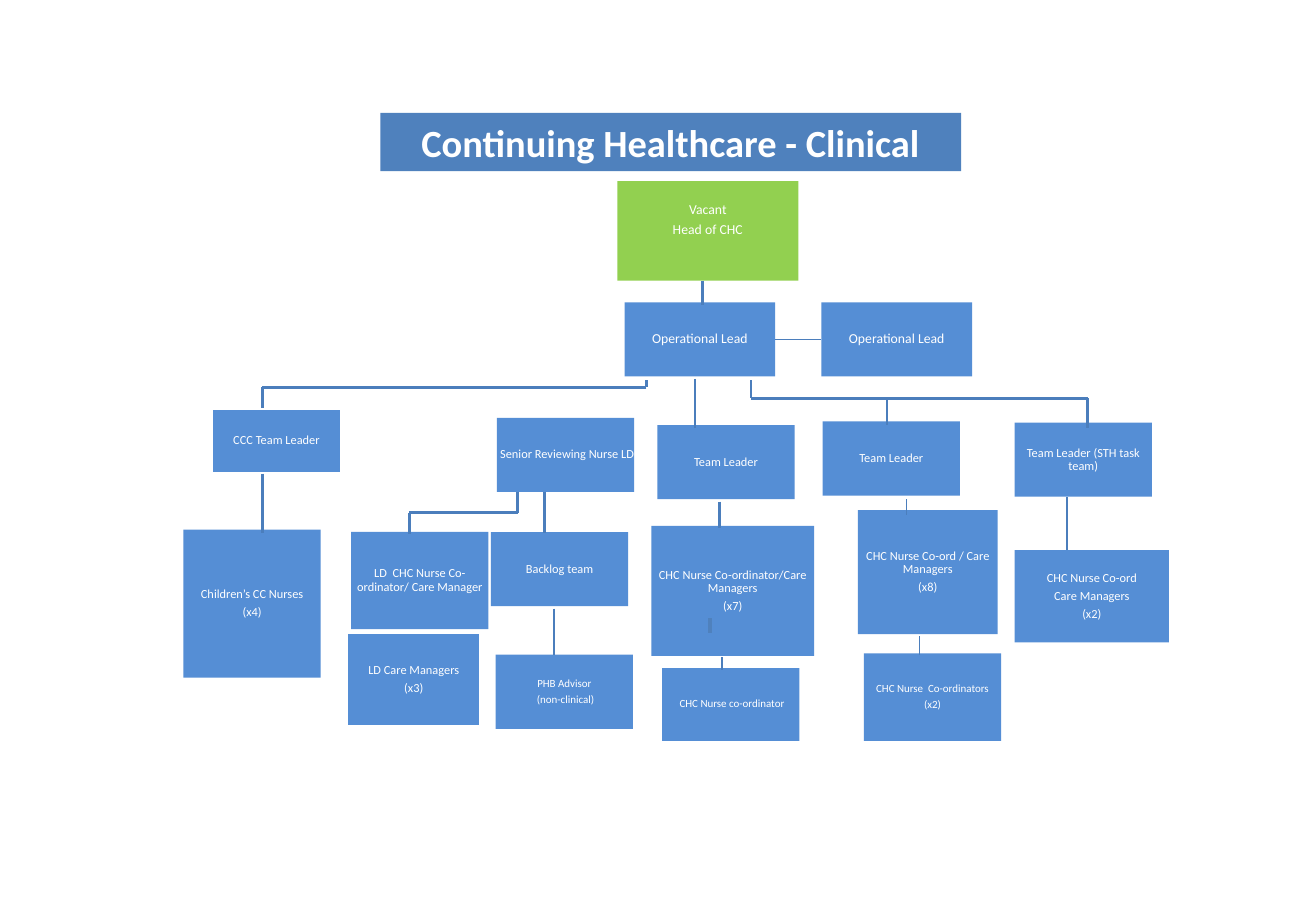
from lxml import etree
from pptx import Presentation
from pptx.dml.color import RGBColor
from pptx.enum.shapes import MSO_CONNECTOR as Connector, MSO_SHAPE as Shape
from pptx.enum.text import MSO_ANCHOR as Anchor, PP_ALIGN as Align
from pptx.oxml.ns import qn
from pptx.util import Inches, Pt

COLORS = {"title": "4F81BD", "vacant": "92D050", "team": "558ED5",
          "line": "4B7EBC", "mark": "4F81BD", "white": "FFFFFF"}
FONT = "Calibri"
TITLE = ("Continuing Healthcare - Clinical", 3.13, 0.93, 4.78, 0.48)
HEAD = ("Vacant\nHead of CHC", 5.08, 1.49, 1.49, 0.82)
HEAD_INSET = 0.18

LEAD_SIZE = (1.24, 0.61)
LEADS = [("Operational Lead", 5.14, 2.49), ("Operational Lead", 6.76, 2.49)]

TEAM_SIZE = (1.13, 0.61)
TEAMS = [
    (" Senior Reviewing Nurse LD", 4.09, 3.44),
    ("Backlog team", 4.04, 4.38),
    ("Team Leader", 5.41, 3.5),
    ("Team Leader", 6.77, 3.47),
    ("Team Leader (STH task team)", 8.35, 3.48),
]
STAFF = [
    ("LD  CHC Nurse Co-ordinator/ Care Manager", 2.89, 4.38, 1.13, 0.8),
    ("Children’s CC Nurses\n(x4)", 1.51, 4.36, 1.13, 1.22),
    ("CHC Nurse Co-ordinator/Care Managers\n(x7)", 5.36, 4.33, 1.34, 1.07),
    ("CHC Nurse Co-ord / Care Managers\n(x8)", 7.06, 4.2, 1.15, 1.02),
    ("CHC Nurse Co-ord\nCare Managers\n(x2)", 8.35, 4.53, 1.27, 0.76),
]
SMALL_PRINT = [
    ("PHB Advisor\n (non-clinical)", 4.08, 5.39, 1.13, 0.61),
    (" CHC Nurse co-ordinator", 5.45, 5.5, 1.13, 0.6),
    ("CHC Nurse  Co-ordinators\n(x2)", 7.11, 5.38, 1.13, 0.72),
]
OUTLINED = [
    ("CCC Team Leader", 1.74, 3.36, 1.07, 0.54),
    ("LD Care Managers\n(x3)", 2.85, 5.21, 1.11, 0.77),
]

ROUTES = [
    [(4.48, 4.05), (4.48, 4.39)],
    [(8.78, 4.09), (8.78, 4.53)],
    [(2.16, 3.9), (2.16, 4.39)],
    [(5.78, 2.31), (5.78, 2.51)],
    [(5.32, 3.13), (5.32, 3.19), (2.16, 3.19), (2.16, 3.36)],
    [(5.72, 3.12), (5.72, 3.52)],
    [(6.18, 3.13), (6.18, 3.28), (8.95, 3.28), (8.95, 3.52)],
    [(7.3, 3.28), (7.3, 3.5)],
    [(5.92, 4.13), (5.92, 4.35)],
    [(5.94, 5.41), (5.94, 5.52)],
    [(4.26, 4.05), (4.26, 4.22), (3.37, 4.22), (3.37, 4.4)],
]
THIN_ROUTES = [
    [(4.56, 5.01), (4.56, 5.39)],
    [(7.46, 4.11), (7.46, 4.24)],
    [(7.57, 5.24), (7.57, 5.39)],
]
MARK = [(5.84, 5.09), (5.84, 5.21)]


def color(name):
    return RGBColor.from_string(COLORS[name])


def add_box(page, text, left, top, width, height, size, fill="team", outlined=False):
    box = page.shapes.add_shape(Shape.RECTANGLE, *map(Inches, (left, top, width, height)))
    box.shadow.inherit = False
    box.fill.solid()
    box.fill.fore_color.rgb = color(fill)
    if outlined:
        box.line.color.rgb = color("white")
        box.line.width = Pt(2)
    else:
        box.line.fill.background()
    frame = box.text_frame
    frame.text = text
    frame.word_wrap = True
    frame.vertical_anchor = Anchor.MIDDLE
    frame.margin_left = frame.margin_right = frame.margin_top = frame.margin_bottom = 0
    for para in frame.paragraphs:
        para.alignment = Align.CENTER
        para.line_spacing = 0.9
        para.space_after = Pt(round(size * 0.35, 1))
        for span in para.runs:
            span.font.name = FONT
            span.font.size = Pt(size)
            span.font.color.rgb = color("white")
    return box


def add_line(page, start, end, width, name="line"):
    line = page.shapes.add_connector(Connector.STRAIGHT, *map(Inches, start + end))
    line.line.color.rgb = color(name)
    line.line.width = Pt(width)
    etree.SubElement(line._element.spPr, qn("a:effectLst"))
    return line


def main():
    deck = Presentation()
    deck.slide_width, deck.slide_height = Inches(10.83), Inches(7.5)
    page = deck.slides.add_slide(deck.slide_layouts[6])

    head = add_box(page, *HEAD, 8.1, "vacant")
    head.text_frame.vertical_anchor = Anchor.TOP
    head.text_frame.margin_top = Inches(HEAD_INSET)
    first_lead, second_lead = [add_box(page, *lead, *LEAD_SIZE, 8.1) for lead in LEADS]
    for team in TEAMS:
        add_box(page, *team, *TEAM_SIZE, 7.3)
    for staff in STAFF:
        add_box(page, *staff, 7.3)
    for staff in SMALL_PRINT:
        add_box(page, *staff, 6.5)

    title = add_box(page, *TITLE, 22.8, "title").text_frame.paragraphs[0]
    title.line_spacing = 1.0
    title.space_after = Pt(0)
    title.runs[0].font.bold = True
    for staff in OUTLINED:
        add_box(page, *staff, 7.3, outlined=True)

    for routes, width in ((ROUTES, 1.5), (THIN_ROUTES, 0.75)):
        for route in routes:
            for start, end in zip(route, route[1:]):
                add_line(page, start, end, width)
    add_line(page, *MARK, 2.25, "mark")
    lead_link = add_line(page, (6.38, 2.8), (6.76, 2.8), 0.75)
    lead_link.begin_connect(first_lead, 3)
    lead_link.end_connect(second_lead, 1)

    deck.save("out.pptx")


if __name__ == "__main__":
    main()
